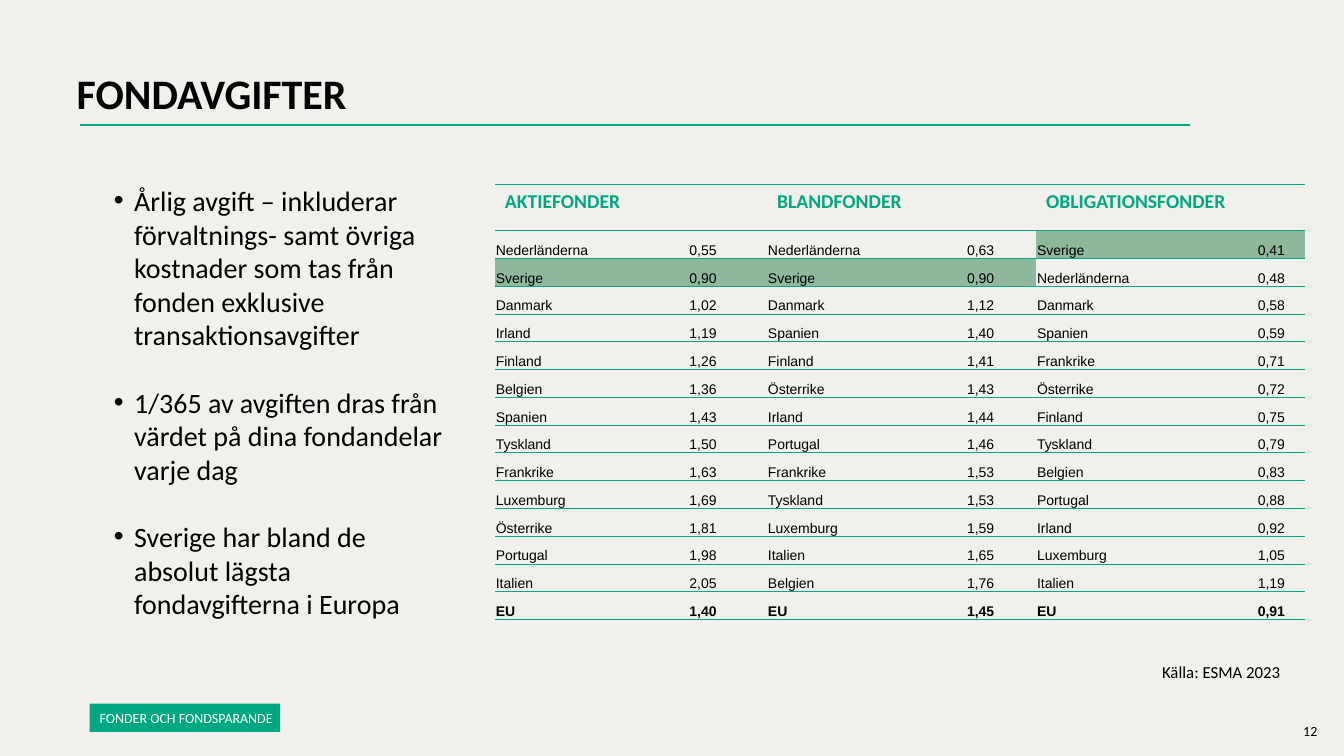
from typing import NamedTuple

from lxml import etree
from pptx import Presentation
from pptx import util as u
from pptx.dml.color import RGBColor
from pptx.enum import shapes, text
from pptx.oxml import ns

COLORS = {
    "background": "F1F0EC",
    "accent": "00A780",
    "highlight": "8FB89D",
    "text": "000000",
    "tag": "FFFFFF",
}
NO_TABLE_STYLE = "{2D5ABB26-0587-4C30-8999-92F81FD0307C}"
HEADER_HEIGHT, ROW_HEIGHT = 32.9, 19.85
COLUMN_WIDTHS = [103, 91.4, 113, 79.2, 144, 48.2]


class Box(NamedTuple):
    left: float
    top: float
    width: float
    height: float


class FundGroup(NamedTuple):
    heading: str
    fees: list[tuple[str, str]]


class Label(NamedTuple):
    content: str
    box: Box
    size: float


FUND_GROUPS = [
    FundGroup("AKTIEFONDER", [
        ("Nederländerna", "0,55"), ("Sverige", "0,90"), ("Danmark", "1,02"),
        ("Irland", "1,19"), ("Finland", "1,26"), ("Belgien", "1,36"),
        ("Spanien", "1,43"), ("Tyskland", "1,50"), ("Frankrike", "1,63"),
        ("Luxemburg", "1,69"), ("Österrike", "1,81"), ("Portugal", "1,98"),
        ("Italien", "2,05"), ("EU", "1,40"),
    ]),
    FundGroup("BLANDFONDER", [
        ("Nederländerna", "0,63"), ("Sverige", "0,90"), ("Danmark", "1,12"),
        ("Spanien", "1,40"), ("Finland", "1,41"), ("Österrike", "1,43"),
        ("Irland", "1,44"), ("Portugal", "1,46"), ("Frankrike", "1,53"),
        ("Tyskland", "1,53"), ("Luxemburg", "1,59"), ("Italien", "1,65"),
        ("Belgien", "1,76"), ("EU", "1,45"),
    ]),
    FundGroup("OBLIGATIONSFONDER", [
        ("Sverige", "0,41"), ("Nederländerna", "0,48"), ("Danmark", "0,58"),
        ("Spanien", "0,59"), ("Frankrike", "0,71"), ("Österrike", "0,72"),
        ("Finland", "0,75"), ("Tyskland", "0,79"), ("Belgien", "0,83"),
        ("Portugal", "0,88"), ("Irland", "0,92"), ("Luxemburg", "1,05"),
        ("Italien", "1,19"), ("EU", "0,91"),
    ]),
]
FEE_FACTS = [
    "Årlig avgift – inkluderar förvaltnings- samt övriga kostnader som tas från "
    "fonden exklusive transaktionsavgifter",
    "1/365 av avgiften dras från värdet på dina fondandelar varje dag",
    "Sverige har bland de absolut lägsta fondavgifterna i Europa",
]
LABELS = [
    Label("Källa: ESMA 2023", Box(823, 469.4, 103, 21.6), 12),
    Label("12", Box(923.8, 512.6, 28.8, 19.4), 10),
]


def rgb(name: str) -> RGBColor:
    return RGBColor.from_string(COLORS[name])


def points(box: Box) -> list[u.Length]:
    return [u.Pt(length) for length in box]


def place(shape, box: Box) -> None:
    shape.left, shape.top, shape.width, shape.height = points(box)


def write(paragraph, content: str, *, size: float, color: str = "text",
          font: str = "Calibri", bold: bool = False, align=text.PP_ALIGN.LEFT,
          before: float = 0, spacing: float = 1, bullet_indent: float = 0) -> None:
    if bullet_indent:
        properties = paragraph._p.get_or_add_pPr()
        properties.set("marL", str(u.Pt(bullet_indent)))
        properties.set("indent", str(-u.Pt(bullet_indent)))
        etree.SubElement(properties, ns.qn("a:buFont"), typeface="Arial")
        etree.SubElement(properties, ns.qn("a:buChar"), char="•")
    paragraph.alignment = align
    paragraph.space_before = u.Pt(before)
    paragraph.line_spacing = spacing
    run = paragraph.add_run()
    run.text = content
    run.font.name = font
    run.font.size = u.Pt(size)
    run.font.bold = bold
    run.font.color.rgb = rgb(color)


def prepare_frame(shape, wrap: bool = True, anchor=text.MSO_ANCHOR.TOP):
    frame = shape.text_frame
    frame.auto_size = text.MSO_AUTO_SIZE.NONE
    frame.word_wrap = wrap
    frame.vertical_anchor = anchor
    return frame


def set_margins(target, left: float, top: float, right: float, bottom: float) -> None:
    target.margin_left, target.margin_top = u.Pt(left), u.Pt(top)
    target.margin_right, target.margin_bottom = u.Pt(right), u.Pt(bottom)


def add_border(cell, side: str, width: float) -> None:
    line = etree.SubElement(cell._tc.get_or_add_tcPr(), ns.qn(f"a:{side}"),
                            w=str(u.Pt(width)))
    fill = etree.SubElement(line, ns.qn("a:solidFill"))
    etree.SubElement(fill, ns.qn("a:srgbClr"), val=COLORS["accent"])


def format_cell(cell, row: int, highlighted: bool = False) -> None:
    add_border(cell, "lnT", 1 if row == 1 else 0.5)
    add_border(cell, "lnB", 1 if row == 0 else 0.5)
    if highlighted:
        cell.fill.solid()
        cell.fill.fore_color.rgb = rgb("highlight")
    else:
        cell.fill.background()


def add_fee_table(slide, groups: list[FundGroup]) -> None:
    countries = len(groups[0].fees)
    box = Box(353.5, 131.8, sum(COLUMN_WIDTHS), HEADER_HEIGHT + countries * ROW_HEIGHT)
    frame = slide.shapes.add_table(countries + 1, 2 * len(groups), *points(box))
    fees = frame.table
    fees._tbl.tblPr.find(ns.qn("a:tableStyleId")).text = NO_TABLE_STYLE
    fees.first_row = fees.horz_banding = False
    for column, width in zip(fees.columns, COLUMN_WIDTHS):
        column.width = u.Pt(width)
    for index, row in enumerate(fees.rows):
        row.height = u.Pt(ROW_HEIGHT if index else HEADER_HEIGHT)
    for group_index, group in enumerate(groups):
        first = 2 * group_index
        write(fees.cell(0, first).text_frame.paragraphs[0], group.heading,
              size=14, color="accent", bold=True)
        for offset in range(2):
            format_cell(fees.cell(0, first + offset), 0)
        for row, fee in enumerate(group.fees, 1):
            country = fee[0]
            for offset, content in enumerate(fee):
                cell = fees.cell(row, first + offset)
                set_margins(cell, 0.7, 0.7, 0.7, 0)
                cell.vertical_anchor = text.MSO_ANCHOR.BOTTOM
                write(cell.text_frame.paragraphs[0], content, size=10, font="Arial",
                      bold=country == "EU",
                      align=text.PP_ALIGN.CENTER if offset else text.PP_ALIGN.LEFT)
                format_cell(cell, row, country == "Sverige")


def add_title_rule(slide) -> None:
    rule = slide.shapes.add_connector(shapes.MSO_CONNECTOR.STRAIGHT, u.Pt(56.9),
                                      u.Pt(89.3), u.Pt(850.3), u.Pt(89.3))
    rule.line.color.rgb = rgb("accent")
    rule.line.width = u.Pt(1.5)
    etree.SubElement(rule._element.spPr, ns.qn("a:effectLst"))


def add_section_tag(slide) -> None:
    section = slide.shapes.add_shape(shapes.MSO_SHAPE.RECTANGLE,
                                     *points(Box(64.1, 502.6, 136.1, 20.2)))
    section.shadow.inherit = False
    section.fill.solid()
    section.fill.fore_color.rgb = rgb("accent")
    section.line.fill.background()
    frame = prepare_frame(section, wrap=False, anchor=text.MSO_ANCHOR.MIDDLE)
    set_margins(frame, 7.2, 5.8, 2.9, 3.6)
    write(frame.paragraphs[0], "FONDER OCH FONDSPARANDE", size=10, color="tag",
          spacing=0.9)


def main() -> None:
    deck = Presentation()
    deck.slide_width, deck.slide_height = u.Pt(960), u.Pt(540)
    slide = deck.slides.add_slide(deck.slide_layouts[1])
    slide.background.fill.solid()
    slide.background.fill.fore_color.rgb = rgb("background")

    heading, facts = slide.placeholders
    place(heading, Box(47.5, 49, 879, 104.4))
    write(prepare_frame(heading).paragraphs[0], "FONDAVGIFTER", size=30, bold=True,
          spacing=0.9)
    place(facts, Box(74.2, 127.4, 252.7, 332.6))
    facts_frame = prepare_frame(facts)
    for index, fact in enumerate(FEE_FACTS):
        paragraph = facts_frame.add_paragraph() if index else facts_frame.paragraphs[0]
        write(paragraph, fact, size=20, before=24 if index else 0, bullet_indent=14.4)

    add_title_rule(slide)
    add_section_tag(slide)
    for label in LABELS:
        note = slide.shapes.add_textbox(*points(label.box))
        write(prepare_frame(note).paragraphs[0], label.content, size=label.size)
    add_fee_table(slide, FUND_GROUPS)
    deck.save("out.pptx")


if __name__ == "__main__":
    main()
